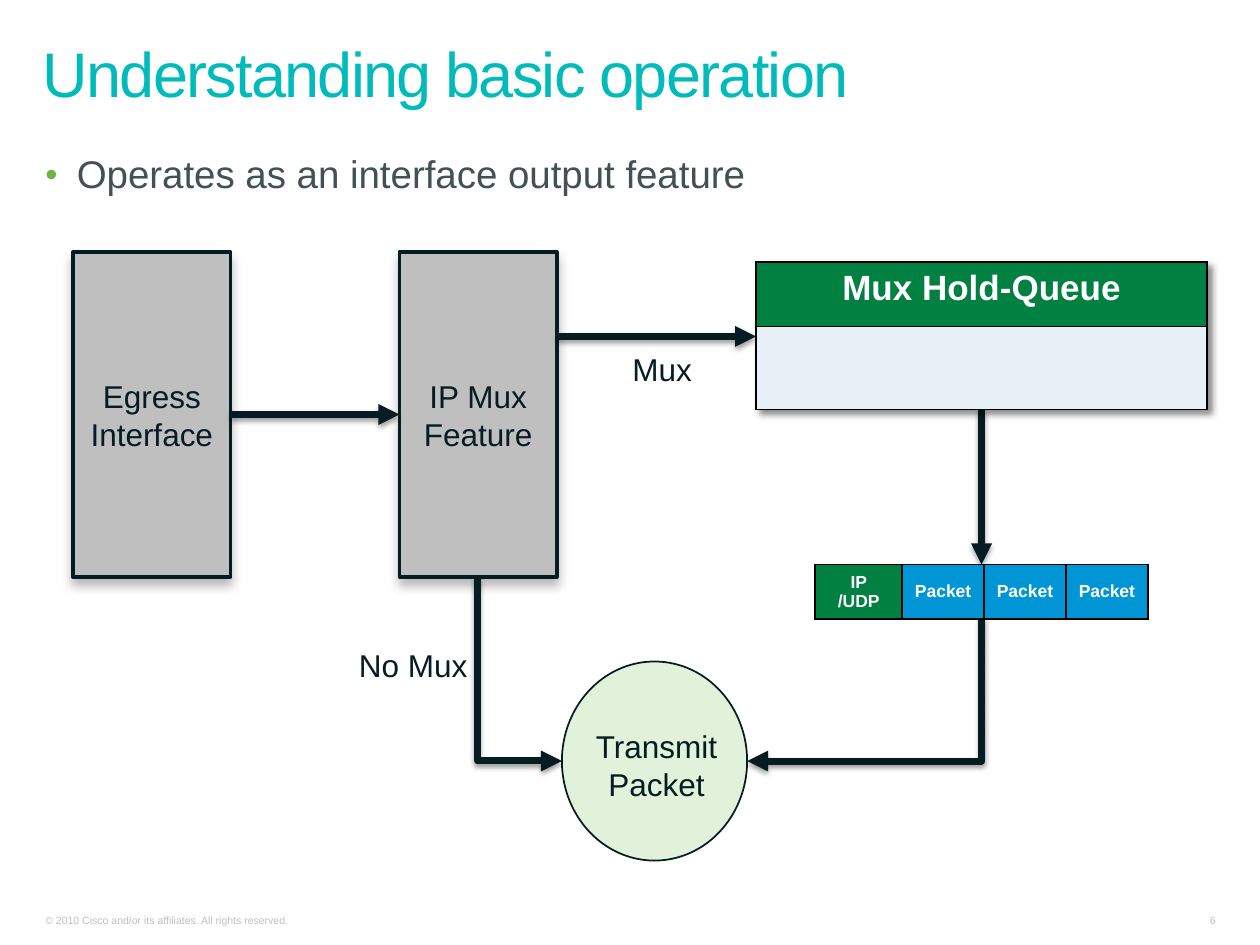
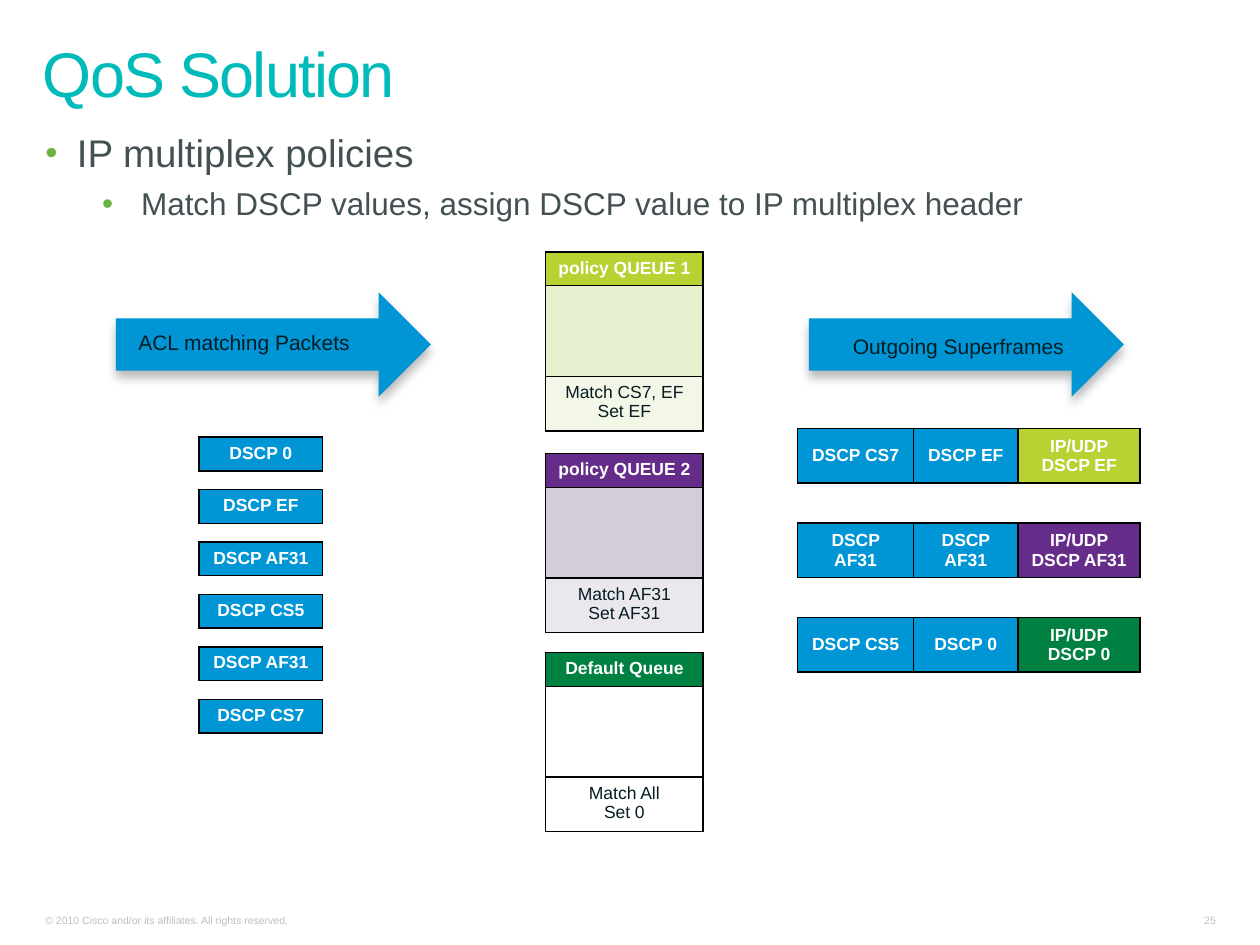
from lxml import etree
from pptx import Presentation
from pptx.dml.color import RGBColor
from pptx.enum.shapes import MSO_CONNECTOR as LINE, MSO_SHAPE as SHAPE
from pptx.enum.text import MSO_ANCHOR as ANCHOR, MSO_AUTO_SIZE as FIT, PP_ALIGN as ALIGN
from pptx.oxml.ns import qn
from pptx.util import Inches, Pt

# Shared look
FONT = "Arial"
HUES = {
    "title": "01BBBB", "body": "435153", "bullet": "6DB344", "foot": "C0C0C0",
    "ink": "061C23", "white": "FFFFFF", "black": "000000", "gray": "BFBFBF",
    "blue": "0096D6", "green": "008041", "mint": "E2F1D9", "ice": "E7EFF7",
    "lime": "B7D333", "lime2": "E6EFCE", "lime3": "F3F7E8",
    "plum": "652D89", "plum2": "D3CDDA", "plum3": "EAE8ED",
}
COPY = "© 2010 Cisco and/or its affiliates. All rights reserved."
BULLETS = [  # size, left margin, hanging indent, space before, bullet percent
    (22, 0.25, -0.25, 14.8, 90),
    (18, 0.76, -0.31, 6, 100),
]


def hue(name):
    return RGBColor.from_string(HUES[name])


def area(box):
    return [Inches(v) for v in box]


def node(parent, tag, **attrs):
    item = etree.SubElement(parent, qn(tag))
    for key, value in attrs.items():
        item.set(key, str(value))
    return item


def shade(parent, alpha, blur, dist, angle=90):
    """Add an outer shadow and return its effect list."""
    fx = parent.find(qn("a:effectLst"))
    if fx is None:
        fx = node(parent, "a:effectLst")
    outer = node(fx, "a:outerShdw", blurRad=Pt(blur), dist=Pt(dist),
                 dir=angle * 60000, algn="ctr", rotWithShape=0)
    color = node(outer, "a:srgbClr", val=HUES["black"])
    node(color, "a:alpha", val=alpha * 1000)
    return fx


def write(par, text, size, ink, bold=False, align=None):
    run = par.add_run()
    run.text = text
    font = run.font
    font.name, font.size, font.bold = FONT, Pt(size), bold
    font.color.rgb = hue(ink)
    if align is not None:
        par.alignment = align
    return run


def label(slide, box, text, size=18, ink="ink", align=ALIGN.LEFT, wrap=False,
          pad=0.05, side=0.1, anchor=ANCHOR.TOP):
    frame = slide.shapes.add_textbox(*area(box)).text_frame
    frame.word_wrap = wrap
    frame.vertical_anchor = anchor
    frame.margin_top = frame.margin_bottom = Inches(pad)
    frame.margin_left = frame.margin_right = Inches(side)
    write(frame.paragraphs[0], text, size, ink, align=align)


def shape(slide, kind, box, fill, line=0, text="", shadow=False):
    item = slide.shapes.add_shape(kind, *area(box))
    item.shadow.inherit = False
    item.fill.solid()
    item.fill.fore_color.rgb = hue(fill)
    if line:
        item.line.color.rgb = hue("ink")
        item.line.width = Pt(line)
    else:
        item.line.fill.background()
    if shadow:
        shade(item.element.spPr, 27, 6, 4)
    if text:
        frame = item.text_frame
        frame.word_wrap = True
        frame.vertical_anchor = ANCHOR.MIDDLE
        write(frame.paragraphs[0], text, 18, "ink", align=ALIGN.CENTER)
    return item


def arrow(slide, start, end, kind=LINE.STRAIGHT):
    link = slide.shapes.add_connector(kind, *area(start + end))
    link.line.color.rgb = hue("ink")
    link.line.width = Pt(4)
    node(link.line._get_or_add_ln(), "a:tailEnd", type="triangle")
    shade(link.element.spPr, 38, 3.1, 1.6)
    return link


def bend(slide, start, end):
    """Draw an arrow that runs down, then sideways."""
    (x1, y1), (x2, y2) = start, end
    mid_x, mid_y = (x1 + x2) / 2, (y1 + y2) / 2
    half_w, half_h = (y2 - y1) / 2, abs(x2 - x1) / 2
    turn = 270 if x2 > x1 else 90
    flip = -1 if x2 > x1 else 1
    link = arrow(slide, (mid_x - flip * half_w, mid_y - half_h),
                 (mid_x + flip * half_w, mid_y + half_h), LINE.ELBOW)
    props = link.element.spPr
    props.find(qn("a:xfrm")).set("rot", str(turn * 60000))
    props.find(qn("a:prstGeom")).set("prst", "bentConnector2")


def border(cell):
    props = cell._tc.get_or_add_tcPr()
    for side in ("L", "R", "T", "B"):
        edge = node(props, "a:ln" + side, w=Pt(1))
        node(node(edge, "a:solidFill"), "a:srgbClr", val=HUES["black"])


def grid(slide, spot, cols, rows, cells, size=10, anchor=ANCHOR.TOP):
    """Build a table of (text, fill) cells; its first row is bold white."""
    box = (*spot, sum(cols), sum(rows))
    table = slide.shapes.add_table(len(rows), len(cols), *area(box)).table
    table.first_row = table.horz_banding = False
    for col, width in zip(table.columns, cols):
        col.width = Inches(width)
    for i, (row, height) in enumerate(zip(table.rows, rows)):
        row.height = Inches(height)
        ink = "ink" if i else "white"
        for cell, (text, fill) in zip(row.cells, cells[i]):
            border(cell)
            cell.fill.solid()
            cell.fill.fore_color.rgb = hue(fill)
            cell.vertical_anchor = anchor
            frame = cell.text_frame
            for j, part in enumerate(text.split("\n") if text else []):
                par = frame.add_paragraph() if j else frame.paragraphs[0]
                write(par, part, size, ink, not i, ALIGN.CENTER)
    return table


def bullet(par, text, level, first):
    size, left, hang, before, scale = BULLETS[level]
    par.level = level
    props = par._p.get_or_add_pPr()
    props.set("marL", str(Inches(left)))
    props.set("indent", str(Inches(hang)))
    node(node(props, "a:buClr"), "a:srgbClr", val=HUES["bullet"])
    node(props, "a:buSzPct", val=scale * 1000)
    node(props, "a:buFont", typeface=FONT)
    node(props, "a:buChar", char="•")
    par.line_spacing = 0.95
    par.space_before = Pt(0 if first else before)
    write(par, text, size, "body", align=ALIGN.LEFT)


def place(holder, box, anchor):
    holder.left, holder.top, holder.width, holder.height = area(box)
    frame = holder.text_frame
    frame.word_wrap = True
    frame.auto_size = FIT.NONE
    frame.vertical_anchor = anchor
    return frame


def page(deck, title, box, points, number):
    """Add a slide with its title, list and footer."""
    slide = deck.slides.add_slide(deck.slide_layouts[1])
    frame = place(slide.shapes.title, (0.25, 0, 9.39, 0.92), ANCHOR.BOTTOM)
    frame.margin_left = frame.margin_right = Inches(0.09)
    head = frame.paragraphs[0]
    head.line_spacing = 0.8
    run = write(head, title, 36, "title", align=ALIGN.LEFT)
    run.font._element.set("spc", "-100")

    frame = place(slide.placeholders[1], box, ANCHOR.TOP)
    for i, (text, level) in enumerate(points):
        par = frame.add_paragraph() if i else frame.paragraphs[0]
        bullet(par, text, level, not i)

    foot = dict(size=6, ink="foot", pad=0.04, side=0.09, anchor=ANCHOR.BOTTOM)
    label(slide, (0.27, 7.2, 3.74, 0.19), COPY, wrap=True, **foot)
    label(slide, (9.46, 7.2, 0.28, 0.19), str(number), align=ALIGN.RIGHT, **foot)
    return slide


# Parts of the flow slide
def hold(slide, x, y):
    table = grid(slide, (x, y), [3.58], [0.51, 0.66],
                 [[("Mux Hold-Queue", "green")], [("", "ice")]], 20)
    props = table._tbl.tblPr
    props.insert(0, shade(props, 45, 4, 3, 45))


def goal(slide, x, y):
    shape(slide, SHAPE.OVAL, (x, y, 1.47, 1.58), "mint", 1)
    label(slide, (x - 0.04, y + 0.47, 1.58, 0.66), "Transmit Packet",
          align=ALIGN.CENTER, wrap=True)


def flow(deck):
    slide = page(deck, "Understanding basic operation", (0.26, 1.17, 9.38, 0.51),
                 [("Operates as an interface output feature", 0)], 6)
    # Stages
    egress, mux = [
        shape(slide, SHAPE.RECTANGLE, (x, 2, 1.25, 2.58), "gray", 2, text, True)
        for x, text in ((0.58, "Egress Interface"), (3.17, "IP Mux Feature"))
    ]
    # Arrows
    link = arrow(slide, (1.83, 3.29), (3.17, 3.29))
    link.begin_connect(egress, 3)
    link.end_connect(mux, 1)
    arrow(slide, (4.42, 2.67), (6, 2.67))
    arrow(slide, (7.79, 3.25), (7.79, 4.48))
    bend(slide, (3.79, 4.58), (4.46, 6.04))
    bend(slide, (7.79, 4.89), (5.93, 6.04))
    label(slide, (4.92, 2.73, 0.68, 0.4), "Mux")
    label(slide, (2.75, 5.08, 1.07, 0.4), "No Mux")
    # Queue, superframe and end point
    hold(slide, 6, 2.08)
    grid(slide, (6.47, 4.48), [0.69] + [0.65] * 3, [0.41],
         [[("IP /UDP", "green")] + [("Packet", "blue")] * 3], anchor=ANCHOR.MIDDLE)
    goal(slide, 4.46, 5.25)


# Parts of the policy slide
def banner(slide, x, y, text, dx, dy):
    shape(slide, SHAPE.RIGHT_ARROW, (x, y, 2.5, 0.83), "blue", shadow=True)
    label(slide, (x + dx, y + dy, 1.9, 0.3), text, 12)


def inputs(slide, x, y):
    names = ["0", "EF", "AF31", "CS5", "AF31", "CS7"]
    step = 2.08 / (len(names) - 1)
    for i, name in enumerate(names):
        grid(slide, (x, y + i * step), [0.98], [0.26], [[("DSCP " + name, "blue")]])


def queues(slide, x):
    stack = [
        (2, "policy QUEUE 1", "Match CS7, EF\nSet EF", ("lime", "lime2", "lime3")),
        (3.6, "policy QUEUE 2", "Match AF31\nSet AF31", ("plum", "plum2", "plum3")),
        (5.18, "Default Queue", "Match All\nSet 0", ("green", "white", "white")),
    ]
    for y, name, rule, fills in stack:
        cells = [[cell] for cell in zip((name, "", rule), fills)]
        grid(slide, (x, y), [1.25], [0.26, 0.72, 0.41], cells)


def frames(slide, x, y):
    rows = [("CS7", "EF", "EF", "lime"), ("AF31", "AF31", "AF31", "plum"),
            ("CS5", "0", "0", "green")]
    for i, (one, two, mark, fill) in enumerate(rows):
        cells = [("DSCP " + one, "blue"), ("DSCP " + two, "blue"),
                 ("IP/UDP\nDSCP " + mark, fill)]
        grid(slide, (x, y + i * 0.75), [0.92, 0.83, 0.97], [0.43], [cells],
             anchor=ANCHOR.MIDDLE)


def policy(deck):
    points = [("IP multiplex policies", 0),
              ("Match DSCP values, assign DSCP value to IP multiplex header", 1)]
    slide = page(deck, "QoS Solution", (0.26, 1, 9.38, 0.83), points, 25)
    queues(slide, 4.33)
    banner(slide, 0.92, 2.32, "ACL matching Packets", 0.08, 0.25)
    inputs(slide, 1.58, 3.47)
    banner(slide, 6.42, 2.32, "Outgoing Superframes", 0.25, 0.28)
    frames(slide, 6.33, 3.4)


def main():
    deck = Presentation()
    deck.slide_width, deck.slide_height = Inches(10), Inches(7.5)
    flow(deck)
    policy(deck)
    deck.save("out.pptx")


if __name__ == "__main__":
    main()
